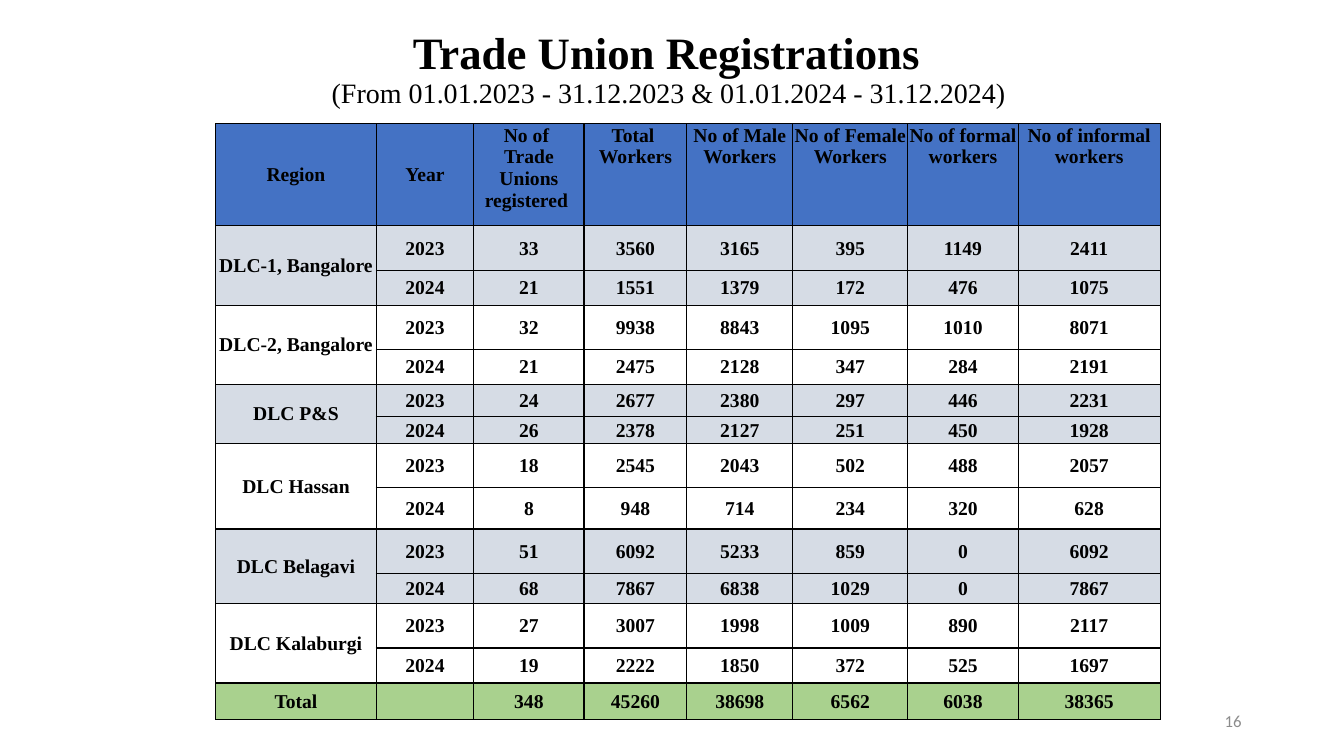
from lxml.etree import SubElement
from pptx import Presentation
from pptx.dml.color import RGBColor
from pptx.enum.text import MSO_ANCHOR as Anchor, PP_ALIGN as Align
from pptx.oxml.ns import qn
from pptx.util import Cm, Pt

TITLE = "Trade Union Registrations "
PERIOD = "(From 01.01.2023 - 31.12.2023 & 01.01.2024 - 31.12.2024) "
PAGE_NUMBER = "16"
HEADERS = [
    "Region", "Year", "No of \nTrade Unions registered ", "Total \nWorkers",
    "No of Male\nWorkers", "No of Female\nWorkers", "No of formal workers",
    "No of informal workers",
]
YEARS = ["2023", "2024"]
REGIONS = {
    "DLC-1, Bangalore": [(33, 3560, 3165, 395, 1149, 2411),
                         (21, 1551, 1379, 172, 476, 1075)],
    "DLC-2, Bangalore": [(32, 9938, 8843, 1095, 1010, 8071),
                         (21, 2475, 2128, 347, 284, 2191)],
    "DLC P&S": [(24, 2677, 2380, 297, 446, 2231),
                (26, 2378, 2127, 251, 450, 1928)],
    "DLC Hassan": [(18, 2545, 2043, 502, 488, 2057),
                   (8, 948, 714, 234, 320, 628)],
    "DLC Belagavi": [(51, 6092, 5233, 859, 0, 6092),
                     (68, 7867, 6838, 1029, 0, 7867)],
    "DLC Kalaburgi": [(27, 3007, 1998, 1009, 890, 2117),
                      (19, 2222, 1850, 372, 525, 1697)],
}
TOTAL = ["Total", "", 348, 45260, 38698, 6562, 6038, 38365]

COLUMN_WIDTHS = [4.04, 2.46, 2.78, 2.59, 2.67, 2.9, 2.78, 3.58]
ROW_HEIGHTS = [2.57, 1.12, 0.88, 1.12, 0.87, 0.82, 0.67, 1.12, 1.04,
               1.12, 0.76, 1.12, 0.88, 0.92]

SERIF, SANS = "Times New Roman", "Calibri"
BLACK = RGBColor(0x00, 0x00, 0x00)
WHITE = RGBColor(0xFF, 0xFF, 0xFF)
GREY = RGBColor(0x8C, 0x8C, 0x8C)
BLUE = RGBColor(0x44, 0x72, 0xC4)
PALE = RGBColor(0xD6, 0xDC, 0xE5)
GREEN = RGBColor(0xA9, 0xD1, 0x8E)


def add_run(paragraph, text, size, font=SERIF, color=BLACK, bold=False):
    run = paragraph.add_run()
    run.text = text
    run.font.size = Pt(size)
    run.font.name = font
    run.font.bold = bold
    run.font.color.rgb = color


def add_text_box(slide, left, top, width, height, align, anchor):
    box = slide.shapes.add_textbox(Cm(left), Cm(top), Cm(width), Cm(height))
    box.text_frame.word_wrap = True
    box.text_frame.vertical_anchor = anchor
    paragraph = box.text_frame.paragraphs[0]
    paragraph.alignment = align
    return paragraph


def add_borders(cell):
    properties = cell._tc.get_or_add_tcPr()
    for side in ("a:lnL", "a:lnR", "a:lnT", "a:lnB"):
        line = SubElement(properties, qn(side), w=str(Pt(1)))
        fill = SubElement(line, qn("a:solidFill"))
        SubElement(fill, qn("a:srgbClr"), val=str(BLACK))


def fill_cell(cell, text, color, anchor):
    add_borders(cell)
    cell.fill.solid()
    cell.fill.fore_color.rgb = color
    cell.margin_left = cell.margin_right = cell.margin_top = Cm(0.02)
    cell.margin_bottom = 0
    cell.vertical_anchor = anchor
    paragraph = cell.text_frame.paragraphs[0]
    paragraph.alignment = Align.CENTER
    if text == "":
        return
    for number, part in enumerate(str(text).split("\n")):
        if number:
            paragraph.add_line_break()
        add_run(paragraph, part, 14, bold=True)


def add_registrations_table(slide):
    rows = [(HEADERS, BLUE)]
    for index, (region, counts) in enumerate(REGIONS.items()):
        color = WHITE if index % 2 else PALE
        for year, values in zip(YEARS, counts):
            name = region if year == YEARS[0] else ""
            rows.append(([name, year, *values], color))
    rows.append((TOTAL, GREEN))

    table = slide.shapes.add_table(
        len(rows), len(HEADERS), Cm(5.44), Cm(3.12),
        Cm(sum(COLUMN_WIDTHS)), Cm(sum(ROW_HEIGHTS))).table
    table.first_row = table.horz_banding = False
    for column, width in zip(table.columns, COLUMN_WIDTHS):
        column.width = Cm(width)
    for row, height in zip(table.rows, ROW_HEIGHTS):
        row.height = Cm(height)

    for row, (values, color) in enumerate(rows):
        for column, value in enumerate(values):
            top = row == 0 and column > 1
            fill_cell(table.cell(row, column), value, color,
                      Anchor.TOP if top else Anchor.MIDDLE)
    for row in range(1, len(rows) - 1, len(YEARS)):
        table.cell(row, 0).merge(table.cell(row + len(YEARS) - 1, 0))


def main():
    presentation = Presentation()
    presentation.slide_width, presentation.slide_height = Cm(33.87), Cm(19.05)
    slide = presentation.slides.add_slide(presentation.slide_layouts[6])

    title = add_text_box(slide, 5.51, 0.66, 22.86, 2.4, Align.CENTER, Anchor.TOP)
    title.line_spacing = 0.9
    add_run(title, TITLE, 32, bold=True)
    title.add_line_break()
    add_run(title, PERIOD, 20)

    add_registrations_table(slide)

    page = add_text_box(slide, 23.92, 17.66, 7.62, 1.01, Align.RIGHT, Anchor.MIDDLE)
    add_run(page, PAGE_NUMBER, 12, SANS, GREY)
    presentation.save("out.pptx")


if __name__ == "__main__":
    main()
